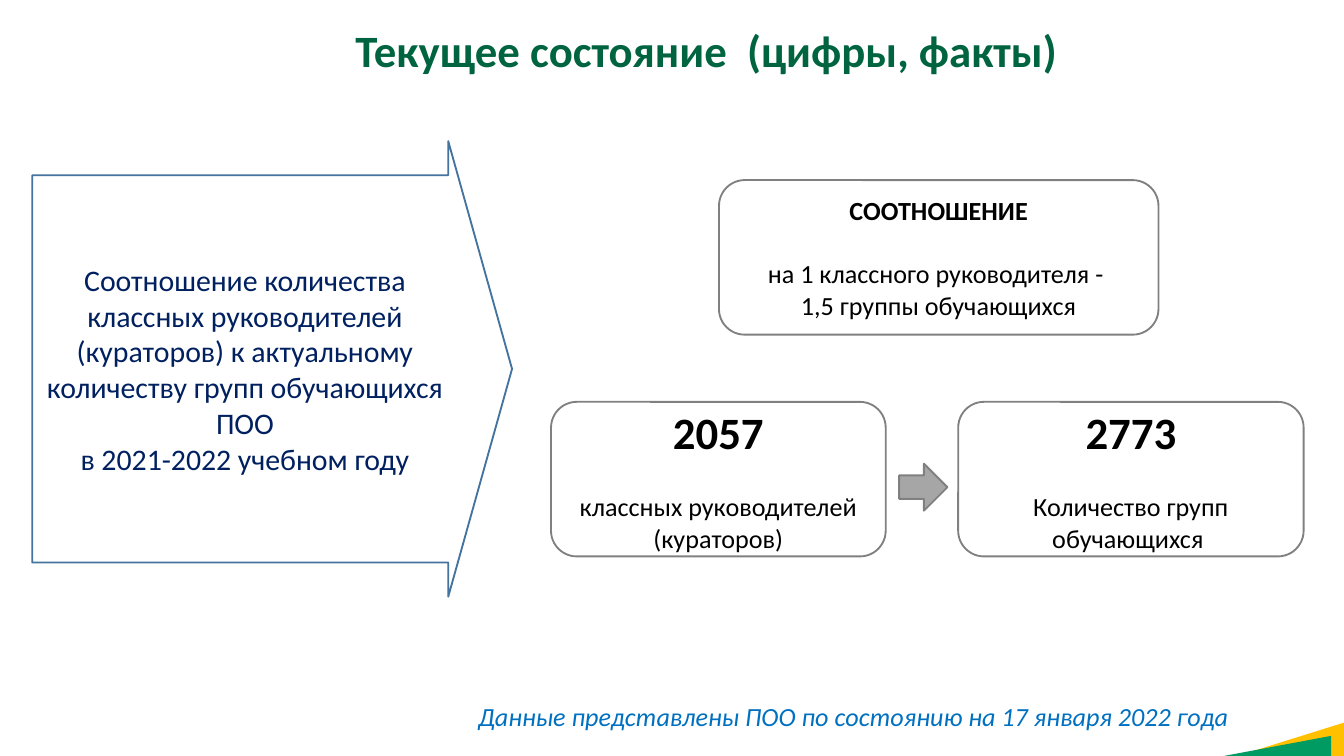
from pptx import Presentation
from pptx.dml.color import RGBColor
from pptx.enum.shapes import MSO_SHAPE
from pptx.enum.text import MSO_ANCHOR, PP_ALIGN
from pptx.util import Inches, Pt

ARROW = MSO_SHAPE.RIGHT_ARROW
ROUND = MSO_SHAPE.ROUNDED_RECTANGLE
WEDGE = MSO_SHAPE.RIGHT_TRIANGLE
TOP, MIDDLE = MSO_ANCHOR.TOP, MSO_ANCHOR.MIDDLE
LEFT, CENTER = PP_ALIGN.LEFT, PP_ALIGN.CENTER

COLORS = {
    "white": "FFFFFF", "black": "000000", "navy": "002060", "blue": "0070C0",
    "edge": "43739E", "gray": "808080", "silver": "A6A6A6",
    "title": "006440", "green": "009B62", "gold": "FFC000",
}


def color(name):
    return RGBColor.from_string(COLORS[name])


def write(para, text, size=14, tint="black", bold=False, italic=False,
          align=CENTER, before=0):
    para.text = text
    para.alignment = align
    para.space_before = Pt(before)
    font = para.font
    font.name = "Calibri"
    font.size = Pt(size)
    font.bold = bold
    font.italic = italic
    font.color.rgb = color(tint)


def place(shape, box):
    shape.left, shape.top, shape.width, shape.height = map(Inches, box)


def add_shape(slide, kind, box, fill, line=None):
    shape = slide.shapes.add_shape(kind, *map(Inches, box))
    shape.shadow.inherit = False
    shape.fill.solid()
    shape.fill.fore_color.rgb = color(fill)
    if line:
        shape.line.color.rgb = color(line)
        shape.line.width = Pt(1)
    else:
        shape.line.fill.background()
    return shape


def add_wedge(slide, box, fill):
    add_shape(slide, WEDGE, box, fill).rotation = 270


def add_title(slide, text):
    title = slide.shapes.title
    place(title, (2.31, 0.12, 5.89, 0.5))
    title.text_frame.vertical_anchor = TOP
    write(title.text_frame.paragraphs[0], text, size=24, tint="title", bold=True)


def add_topic(slide, lines):
    arrow = add_shape(slide, ARROW, (0.24, 1.05, 3.57, 3.39), "white", "edge")
    arrow.adjustments[0] = 0.85
    arrow.adjustments[1] = 0.14
    frame = arrow.text_frame
    frame.word_wrap = True
    frame.vertical_anchor = MIDDLE
    write(frame.paragraphs[0], lines[0], size=16, tint="navy")
    write(frame.add_paragraph(), lines[1], size=16, tint="navy")


def add_card(slide, left, top, width, head, lines, size=24):
    card = add_shape(slide, ROUND, (left, top, width, 1.15), "white", "gray")
    frame = card.text_frame
    frame.word_wrap = True
    frame.vertical_anchor = MIDDLE
    write(frame.paragraphs[0], head, size=size, bold=True)
    for i, line in enumerate(lines):
        write(frame.add_paragraph(), line, before=0 if i else 17)


def add_note(slide, text):
    box = slide.shapes.add_textbox(*map(Inches, (3.46, 5.16, 5.83, 0.34)))
    box.text_frame.word_wrap = False
    write(box.text_frame.paragraphs[0], text, tint="blue", italic=True, align=LEFT)


def main():
    deck = Presentation()
    deck.slide_width, deck.slide_height = Inches(10), Inches(10 * 9 / 16)
    slide = deck.slides.add_slide(deck.slide_layouts[5])

    add_wedge(slide, (9.46, 5.09, 0.26, 0.83), "gold")
    add_wedge(slide, (9.43, 5.15, 0.15, 0.8), "green")
    add_title(slide, "Текущее состояние  (цифры, факты)")
    add_topic(slide, (
        "Соотношение количества классных руководителей (кураторов) "
        "к актуальному количеству групп обучающихся ПОО",
        "в 2021-2022 учебном году",
    ))
    add_card(slide, 5.35, 1.34, 3.27, "СООТНОШЕНИЕ",
             ("на 1 классного руководителя - ", "1,5 группы обучающихся"), size=14)
    add_card(slide, 7.13, 2.99, 2.57, "2773", ("Количество групп обучающихся ",))
    add_card(slide, 4.1, 2.99, 2.49, "2057", ("классных руководителей (кураторов)",))
    add_shape(slide, ARROW, (6.69, 3.45, 0.36, 0.35), "silver", "gray")
    add_note(slide, "Данные представлены ПОО по состоянию на 17 января 2022 года")

    deck.save("out.pptx")


if __name__ == "__main__":
    main()
